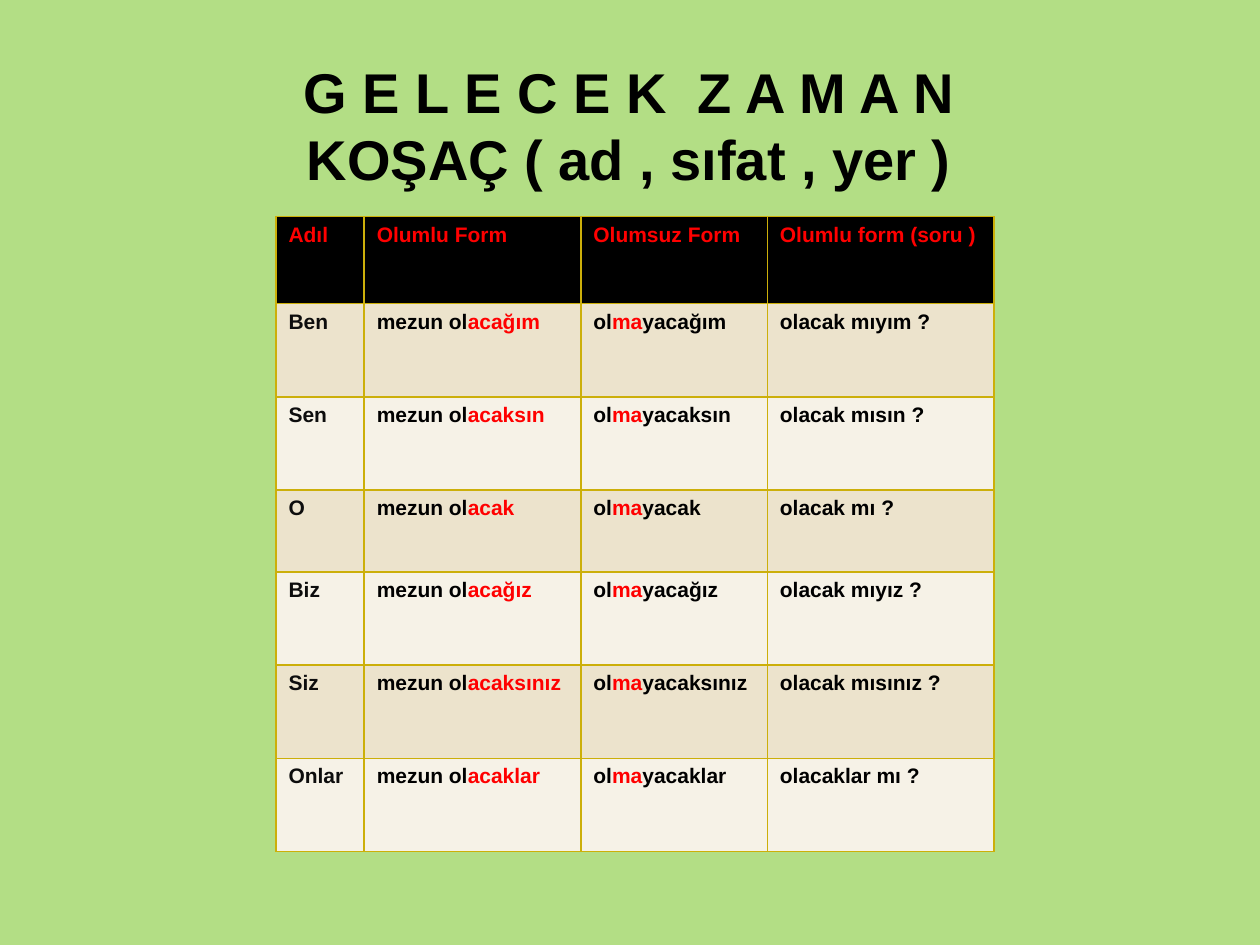
from lxml.etree import SubElement
from pptx import Presentation
from pptx.dml.color import RGBColor
from pptx.enum.text import PP_ALIGN
from pptx.oxml.ns import qn
from pptx.util import Inches, Pt

COLORS = {
    "page": "B3DE85", "black": "000000", "pronoun": "0D0D0D", "accent": "FF0000",
    "border": "CCAF0A", "odd": "ECE3CC", "even": "F6F2E7",
}
TITLE = ["G E L E C E K  Z A M A N", "KOŞAÇ ( ad , sıfat , yer )"]
HEADINGS = ["Adıl", "Olumlu Form", "Olumsuz Form", "Olumlu form (soru )"]
# pronoun, future ending, question
FORMS = [
    ("Ben", "acağım", "olacak mıyım ?"),
    ("Sen", "acaksın", "olacak mısın ?"),
    ("O", "acak", "olacak mı ?"),
    ("Biz", "acağız", "olacak mıyız ?"),
    ("Siz", "acaksınız", "olacak mısınız ?"),
    ("Onlar", "acaklar", "olacaklar mı ?"),
]
COLUMN_WIDTHS = [0.7, 1.72, 1.48, 1.8]
ROW_HEIGHTS = [0.69, 0.74, 0.74, 0.65, 0.74, 0.74, 0.74]
TITLE_BOX = (1.13, 0.39, 7.73, 1.92)
TABLE_CORNER = (2.19, 1.72)


def rgb(name):
    return RGBColor.from_string(COLORS[name])


def add_span(para, text, size, color):
    span = para.add_run()
    span.text = text
    for key, value in {"name": "Arial", "size": Pt(size), "bold": True}.items():
        setattr(span.font, key, value)
    span.font.color.rgb = rgb(color)


def add_borders(cell):
    """Draw all four sides; borders must precede the fill in the cell's XML."""
    properties = cell._tc.get_or_add_tcPr()
    for side in ("lnL", "lnR", "lnT", "lnB"):
        line = SubElement(properties, qn(f"a:{side}"), w=str(Pt(1)))
        fill = SubElement(line, qn("a:solidFill"))
        SubElement(fill, qn("a:srgbClr"), val=COLORS["border"])


def table_rows():
    """Yield each row's fill and its cells as lists of (text, color)."""
    yield "black", [[(heading, "accent")] for heading in HEADINGS]
    for index, (pronoun, ending, question) in enumerate(FORMS):
        yield ("even" if index % 2 else "odd"), [
            [(pronoun, "pronoun")],
            [("mezun ol", "black"), (ending, "accent")],
            [("ol", "black"), ("ma", "accent"), ("y" + ending, "black")],
            [(question, "black")],
        ]


def add_table(page):
    size = (sum(COLUMN_WIDTHS), sum(ROW_HEIGHTS))
    table = page.shapes.add_table(
        len(ROW_HEIGHTS), len(COLUMN_WIDTHS), *map(Inches, TABLE_CORNER + size)
    ).table
    for column, width in zip(table.columns, COLUMN_WIDTHS):
        column.width = Inches(width)
    for row, height, (fill, contents) in zip(table.rows, ROW_HEIGHTS, table_rows()):
        row.height = Inches(height)
        for cell, spans in zip(row.cells, contents):
            add_borders(cell)
            cell.fill.solid()
            cell.fill.fore_color.rgb = rgb(fill)
            for text, color in spans:
                add_span(cell.text_frame.paragraphs[0], text, 12, color)


def add_title(page):
    frame = page.shapes.add_textbox(*map(Inches, TITLE_BOX)).text_frame
    frame.word_wrap = True
    frame.margin_top = Inches(0.07)
    for index, text in enumerate(TITLE):
        para = frame.add_paragraph() if index else frame.paragraphs[0]
        para.alignment = PP_ALIGN.CENTER
        para.line_spacing = Pt(38.3)
        add_span(para, text, 32, "black")


def main():
    deck = Presentation()
    deck.slide_width, deck.slide_height = Inches(10), Inches(7.5)
    page = deck.slides.add_slide(deck.slide_layouts[6])
    page.background.fill.solid()
    page.background.fill.fore_color.rgb = rgb("page")
    add_table(page)
    add_title(page)
    deck.save("out.pptx")


if __name__ == "__main__":
    main()
